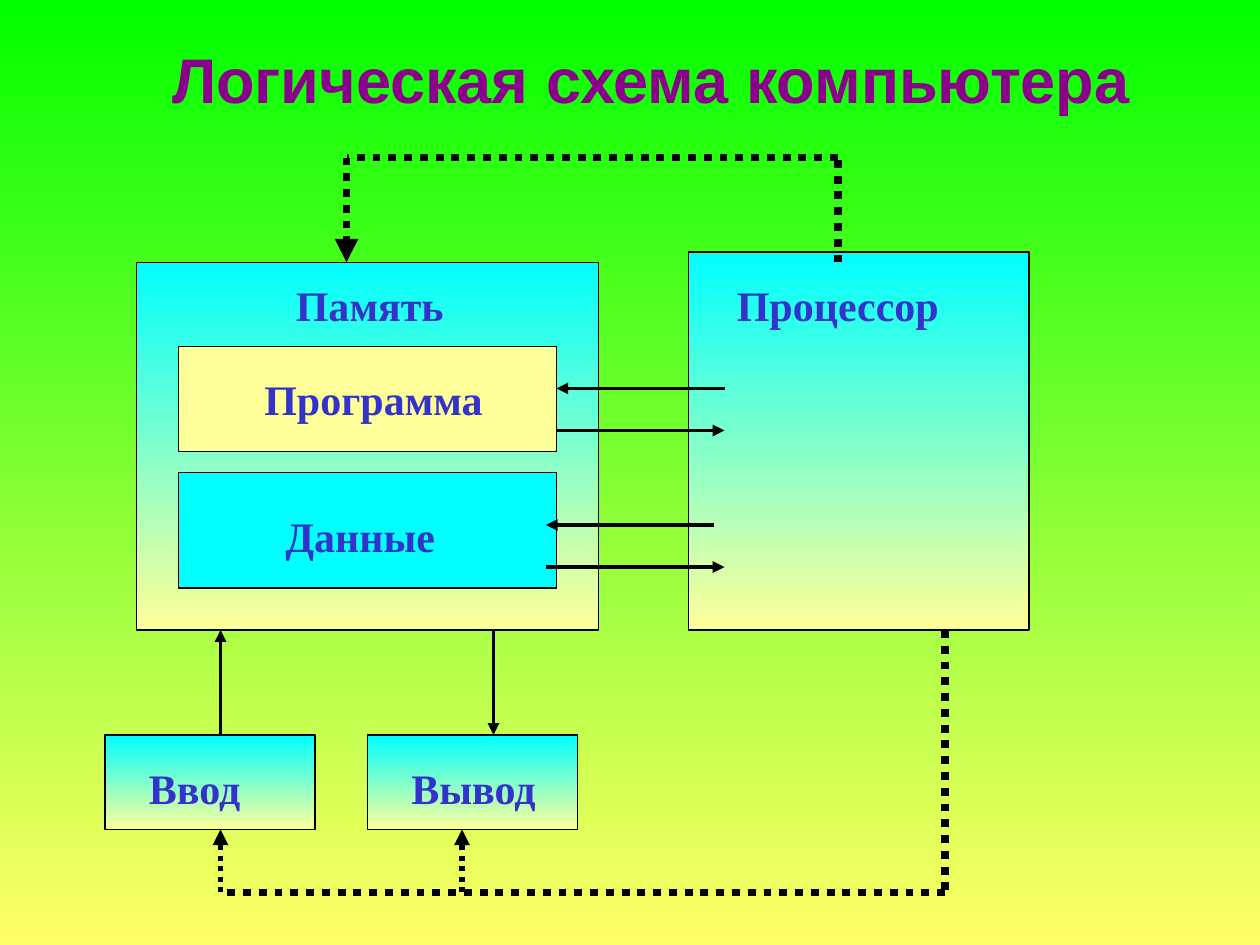
from lxml.etree import SubElement
from pptx import Presentation
from pptx.dml.color import RGBColor
from pptx.enum.dml import MSO_LINE
from pptx.enum.shapes import MSO_CONNECTOR, MSO_SHAPE
from pptx.enum.text import MSO_ANCHOR, MSO_AUTO_SIZE, PP_ALIGN
from pptx.oxml.ns import qn
from pptx.util import Inches, Pt

HUES = {
    "green": "00FF00", "lemon": "FFFF66", "cyan": "00FFFF", "cream": "FFFF99",
    "ink": "000000", "label": "3333CC", "title": "8B008B",
}
COLS, ROWS = 120, 90
WIDE, HIGH = Inches(10), Inches(7.5)


def hue(name):
    return RGBColor.from_string(HUES[name])


def spot(x, y):
    return round(WIDE * x / COLS), round(HIGH * y / ROWS)


def area(x, y, w, h):
    return *spot(x, y), *spot(w, h)


def fade(fill, top, base):
    fill.gradient()
    fill.gradient_angle = 270
    for stop, name in zip(fill.gradient_stops, (top, base)):
        stop.color.rgb = hue(name)


def write(frame, text, size=24, font="Times New Roman", color="label", align=PP_ALIGN.LEFT):
    frame.word_wrap = True
    para = frame.paragraphs[0]
    para.alignment = align
    run = para.add_run()
    run.text = text
    run.font.size = Pt(size)
    run.font.name = font
    run.font.bold = True
    run.font.color.rgb = hue(color)


def label(slide, text, x, y, w):
    frame = slide.shapes.add_textbox(*area(x, y, w, 6)).text_frame
    write(frame, text)
    frame.auto_size = MSO_AUTO_SIZE.SHAPE_TO_FIT_TEXT


def block(slide, box, color=None):
    shape = slide.shapes.add_shape(MSO_SHAPE.RECTANGLE, *area(*box))
    shape.shadow.inherit = False
    if color:
        shape.fill.solid()
        shape.fill.fore_color.rgb = hue(color)
    else:
        fade(shape.fill, "cyan", "cream")
    shape.line.color.rgb = hue("ink")
    shape.line.width = Pt(0.75)


def link(slide, start, end, width=2.25, dots=False, head=True):
    wire = slide.shapes.add_connector(MSO_CONNECTOR.STRAIGHT, *spot(*start), *spot(*end))
    wire.line.color.rgb = hue("ink")
    wire.line.width = Pt(width)
    if dots:
        wire.line.dash_style = MSO_LINE.ROUND_DOT
    props = wire.element.spPr
    if head:
        SubElement(props.find(qn("a:ln")), qn("a:tailEnd"), type="triangle")
    SubElement(props, qn("a:effectLst"))


def route(slide, points, head):
    last = len(points) - 2
    for i, pair in enumerate(zip(points, points[1:])):
        link(slide, *pair, width=4.5, dots=True, head=head and i == last)


def header(slide, box):
    title = slide.shapes.title
    title.left, title.top, title.width, title.height = area(*box)
    title.text_frame.vertical_anchor = MSO_ANCHOR.MIDDLE
    write(title.text_frame, "Логическая схема компьютера", size=36, font="Arial",
          color="title", align=PP_ALIGN.CENTER)


def memory(slide, box):
    x, y, w, h = box
    block(slide, box)
    block(slide, (x + 4, y + 8, w - 8, 10), "cream")
    block(slide, (x + 4, y + 20, w - 8, 11), "cyan")
    label(slide, "Память", x + 14, y + 1, 23)
    label(slide, "Программа", x + 11, y + 10, 24)
    label(slide, "Данные", x + 13, y + 23, 17)


def chip(slide, box):
    x, y, w, h = box
    block(slide, box)
    label(slide, "Процессор", x + 3.4, y + 2, 23)


def port(slide, box, text):
    x, y, w, h = box
    block(slide, box)
    label(slide, text, x + 3, y + 2, 15)


def bus(slide, box):
    x, y, w, h = box
    right = x + w
    link(slide, (right, y), (x + 1, y))
    link(slide, (x + 1, y + 4), (right, y + 4))
    link(slide, (right - 1, y + 13), (x, y + 13))
    link(slide, (x, y + h), (right, y + h))


def feed(slide, box):
    x, y, w, h = box
    link(slide, (x, y + h), (x, y))
    link(slide, (x + w, y), (x + w, y + h))


def upper(slide, box):
    x, y, w, h = box
    route(slide, [(x + w, y + h), (x + w, y), (x, y), (x, y + h)], True)


def lower(slide, box):
    x, y, w, h = box
    base = y + h
    route(slide, [(x + w, y), (x + w, base), (x, base)], False)
    for col in (x, x + 23):
        link(slide, (col, base), (col, base - 6), width=3, dots=True)


def main():
    deck = Presentation()
    deck.slide_width, deck.slide_height = WIDE, HIGH
    slide = deck.slides.add_slide(deck.slide_layouts[5])
    fade(slide.background.fill, "green", "lemon")
    header(slide, (11, 4, 102, 7))
    memory(slide, (13, 25, 44, 35))
    chip(slide, (65.6, 24, 32.4, 36))
    for x, text in ((10, "Ввод"), (35, "Вывод")):
        port(slide, (x, 70, 20, 9), text)
    bus(slide, (52, 37, 17, 17))
    feed(slide, (21, 60, 26, 10))
    lower(slide, (21, 60, 69, 25))
    upper(slide, (33, 15, 46.8, 10))
    deck.save("out.pptx")


if __name__ == "__main__":
    main()
